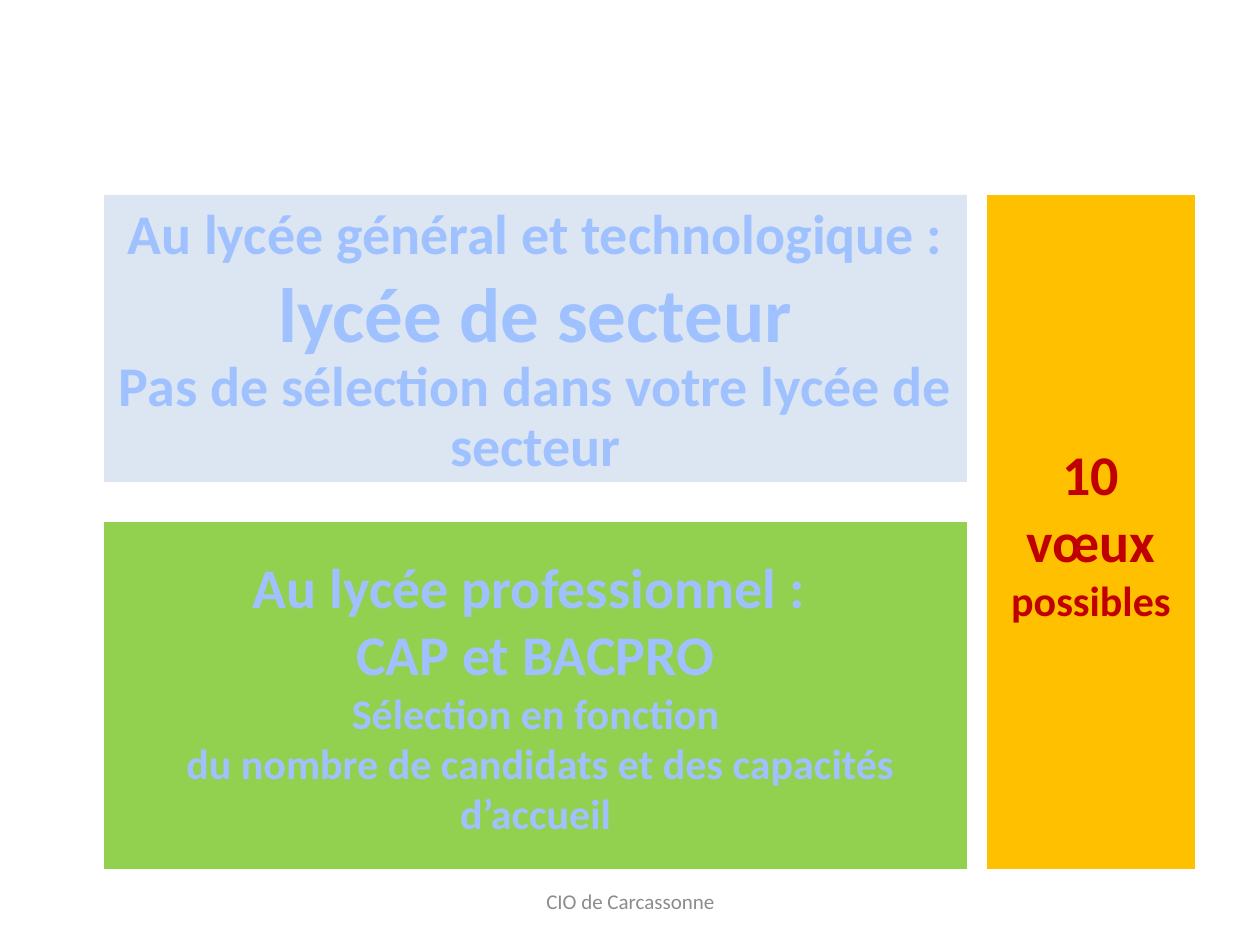
"""Build the slide on school choices: two admission panels, a wish count and a footer."""
from pptx import Presentation
from pptx.dml.color import RGBColor
from pptx.enum.shapes import MSO_SHAPE
from pptx.enum.text import MSO_ANCHOR, PP_ALIGN
from pptx.util import Emu, Pt

RECT = MSO_SHAPE.RECTANGLE
MIDDLE, CENTER = MSO_ANCHOR.MIDDLE, PP_ALIGN.CENTER
PX = 914400 / 126

THEME = {
    "font": "Calibri",
    "general": "DCE6F2", "vocational": "92D050", "wishes": "FFC000",
    "panel_text": "A0C1FF", "wish_text": "C00000", "footer_text": "8C8C8C",
    "huge": 44, "large": 32, "medium": 24, "small": 12,
}

GENERAL = [
    {"lines": [[("Au lycée général et technologique :", "large")],
               [("lycée de secteur", "huge")]]},
    {"lines": [[("Pas de sélection dans votre lycée de secteur", "large")]],
     "spacing": 0.9},
]
VOCATIONAL = [
    {"lines": [[("Au lycée professionnel : ", "large")],
               [("CAP et BACPRO", "large")],
               [("Sélection en fonction", "medium")],
               [(" du nombre de candidats et des capacités d’accueil", "medium")]]},
]
WISHES = [{"lines": [[("10 vœux ", "large"), ("possibles", "medium")]]}]
FOOTER = [{"lines": [[("CIO de Carcassonne", "small")]]}]

LEFT, TOP, BOTTOM = 104, 195, 869
PANEL_W, WISH_W, COL_GAP = 863, 208, 20
GENERAL_H, ROW_GAP = 287, 40
VOCATIONAL_TOP = TOP + GENERAL_H + ROW_GAP
WISH_LEFT = LEFT + PANEL_W + COL_GAP

PANELS = [
    ((LEFT, VOCATIONAL_TOP, PANEL_W, BOTTOM - VOCATIONAL_TOP),
     "vocational", "panel_text", VOCATIONAL),
    ((LEFT, TOP, PANEL_W, GENERAL_H), "general", "panel_text", GENERAL),
    ((WISH_LEFT, TOP, WISH_W, BOTTOM - TOP), "wishes", "wish_text", WISHES),
]
FOOTER_BOX = (431, 876, 399, 50)


def emu(box):
    return [Emu(round(v * PX)) for v in box]


def color(name):
    return RGBColor.from_string(THEME[name])


def write(tf, paragraphs, text_color, bold):
    for name, value in {"word_wrap": True, "vertical_anchor": MIDDLE}.items():
        setattr(tf, name, value)
    for i, para in enumerate(paragraphs):
        p = tf.add_paragraph() if i else tf.paragraphs[0]
        p.alignment = CENTER
        p.line_spacing = para.get("spacing")
        for j, line in enumerate(para["lines"]):
            if j:
                p.add_line_break()
            for text, size in line:
                r = p.add_run()
                r.text = text
                fmt = {"name": THEME["font"], "size": Pt(THEME[size]), "bold": bold}
                for name, value in fmt.items():
                    setattr(r.font, name, value)
                r.font.color.rgb = color(text_color)


def add_panel(s, box, fill, text_color, paragraphs):
    sp = s.shapes.add_shape(RECT, *emu(box))
    sp.shadow.inherit = False
    sp.fill.solid()
    sp.fill.fore_color.rgb = color(fill)
    sp.line.fill.background()
    write(sp.text_frame, paragraphs, text_color, True)


def main():
    prs = Presentation()
    prs.slide_width, prs.slide_height = emu((1260, 945))
    s = prs.slides.add_slide(prs.slide_layouts[6])
    for panel in PANELS:
        add_panel(s, *panel)
    footer = s.shapes.add_textbox(*emu(FOOTER_BOX))
    write(footer.text_frame, FOOTER, "footer_text", False)
    prs.save("out.pptx")


if __name__ == "__main__":
    main()
